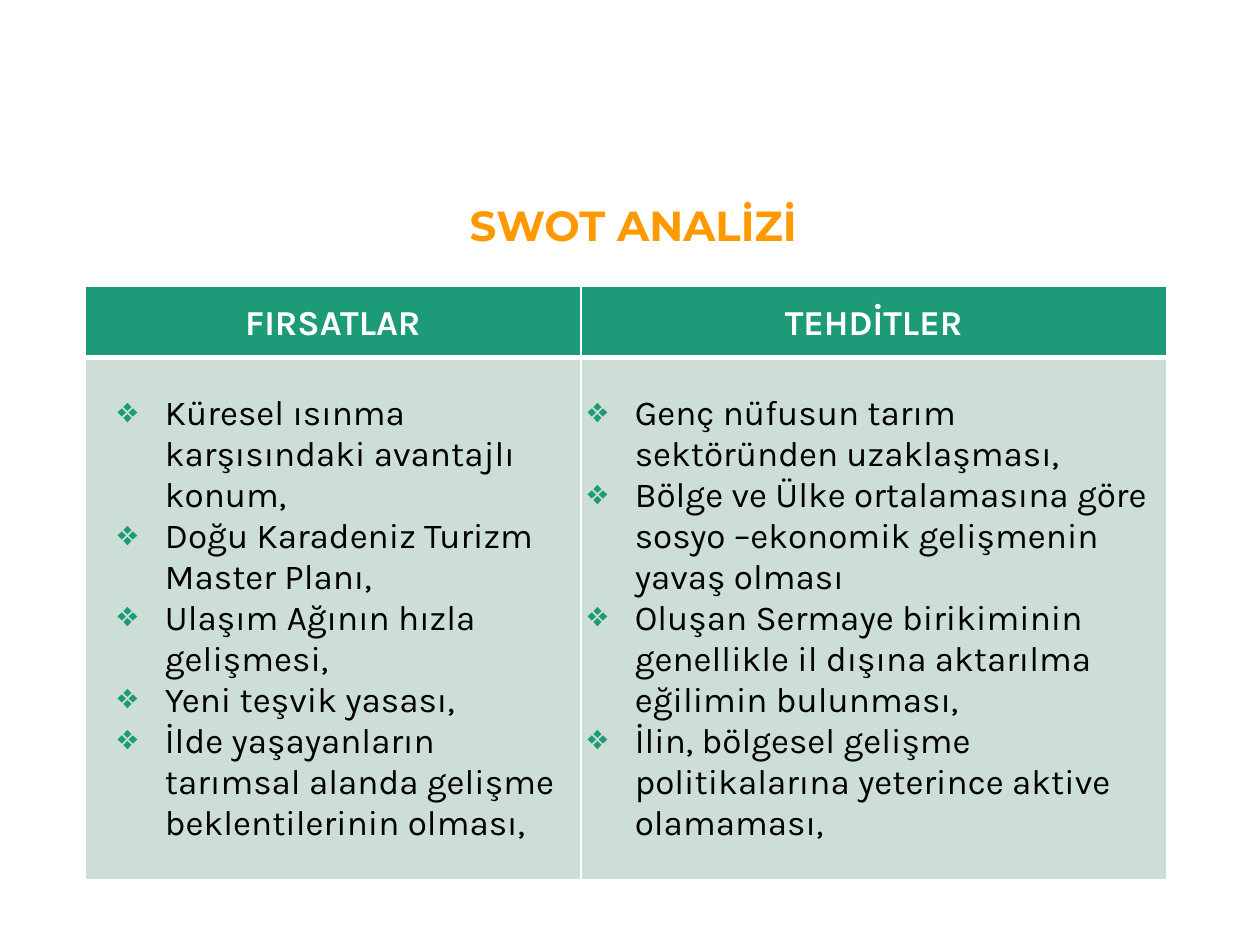
"""Build a SWOT slide listing opportunities and threats in a two-column table."""
from dataclasses import dataclass

from lxml import etree
from pptx import Presentation
from pptx.dml.color import RGBColor
from pptx.enum import text
from pptx.oxml.ns import qn
from pptx.util import Pt


@dataclass(frozen=True)
class Theme:
    """Colours, fonts and type sizes of the slide."""
    accent: str = "FF9900"
    green: str = "1D9A78"
    pale: str = "CDDED6"
    white: str = "FFFFFF"
    black: str = "000000"
    title_font: str = "Montserrat"
    body_font: str = "Karla"
    title_size: int = 24
    body_size: int = 20


THEME = Theme()
HANGING = Pt(27)
COLUMNS = [
    ("FIRSATLAR", 283.5, 42, [
        "Küresel ısınma karşısındaki avantajlı konum,",
        "Doğu Karadeniz Turizm Master Planı,",
        "Ulaşım Ağının hızla gelişmesi,",
        "Yeni teşvik yasası,",
        "İlde yaşayanların tarımsal alanda gelişme beklentilerinin olması,",
    ]),
    ("TEHDİTLER", 334.5, 27, [
        "Genç nüfusun tarım sektöründen uzaklaşması,",
        "Bölge ve Ülke ortalamasına göre sosyo –ekonomik gelişmenin yavaş olması",
        "Oluşan Sermaye birikiminin genellikle il dışına aktarılma eğilimin bulunması,",
        "İlin, bölgesel gelişme politikalarına yeterince aktive olamaması,",
    ]),
]


def format_runs(p, font, size, color, bold):
    """Apply one character format to every run of a paragraph."""
    for r in p.runs:
        r.font.name = font
        r.font.size = Pt(size)
        r.font.bold = bold
        r.font.color.rgb = RGBColor.from_string(color)


def add_title(slide, title):
    """Place and format the title placeholder."""
    sp = slide.shapes.title
    sp.left, sp.top, sp.width, sp.height = Pt(155.5), Pt(113.75), Pt(412.5), Pt(42.5)
    tf = sp.text_frame
    tf.text = title
    tf.word_wrap = True
    tf.auto_size = text.MSO_AUTO_SIZE.NONE
    tf.vertical_anchor = text.MSO_ANCHOR.TOP
    p = tf.paragraphs[0]
    p.alignment = text.PP_ALIGN.CENTER
    p.line_spacing = 0.9
    format_runs(p, THEME.title_font, THEME.title_size, THEME.accent, True)


def add_bullet(p, indent):
    """Give a paragraph a coloured diamond bullet with a hanging indent."""
    pPr = p._p.get_or_add_pPr()
    pPr.set("marL", str(Pt(indent)))
    pPr.set("indent", str(-HANGING))
    clr = etree.SubElement(pPr, qn("a:buClr"))
    etree.SubElement(clr, qn("a:srgbClr"), val=THEME.green)
    etree.SubElement(pPr, qn("a:buChar"), char="❖")


def style_cell(cell, fill, top=1, bottom=1):
    """Set the borders, fill, margins and anchor of a cell."""
    tcPr = cell._tc.get_or_add_tcPr()
    for side, width in zip("LRTB", (1, 1, top, bottom)):
        ln = etree.SubElement(tcPr, qn(f"a:ln{side}"), w=str(Pt(width)))
        solid = etree.SubElement(ln, qn("a:solidFill"))
        etree.SubElement(solid, qn("a:srgbClr"), val=THEME.white)
    cell.fill.solid()
    cell.fill.fore_color.rgb = RGBColor.from_string(fill)
    cell.margin_left = cell.margin_right = Pt(3.75)
    cell.margin_top = cell.margin_bottom = 0
    cell.vertical_anchor = text.MSO_ANCHOR.MIDDLE


def fill_header(cell, heading):
    """Write a column heading."""
    style_cell(cell, THEME.green, bottom=3)
    cell.text_frame.text = heading
    p = cell.text_frame.paragraphs[0]
    p.alignment = text.PP_ALIGN.CENTER
    p.line_spacing = 1.07
    format_runs(p, THEME.body_font, THEME.body_size, THEME.white, True)


def fill_list(cell, items, indent):
    """Write a bulleted list into a cell."""
    style_cell(cell, THEME.pale, top=3)
    cell.text_frame.text = "\n".join(items)
    for p in cell.text_frame.paragraphs:
        add_bullet(p, indent)
        format_runs(p, THEME.body_font, THEME.body_size, THEME.black, False)


def add_swot_table(slide, columns):
    """Add the table with one heading and one list per column."""
    heights = (40.5, 298.5)
    width = sum(column[1] for column in columns)
    table = slide.shapes.add_table(
        len(heights), len(columns), Pt(48.5), Pt(163.75), Pt(width), Pt(sum(heights))).table
    table.horz_banding = False
    for row, height in zip(table.rows, heights):
        row.height = Pt(height)
    for i, (heading, col_width, indent, items) in enumerate(columns):
        table.columns[i].width = Pt(col_width)
        fill_header(table.cell(0, i), heading)
        fill_list(table.cell(1, i), items, indent)


def main():
    """Build and save the presentation."""
    prs = Presentation()
    prs.slide_width, prs.slide_height = Pt(720), Pt(540)
    slide = prs.slides.add_slide(prs.slide_layouts[5])
    add_title(slide, "SWOT ANALİZİ")
    add_swot_table(slide, COLUMNS)
    prs.save("out.pptx")


if __name__ == "__main__":
    main()
